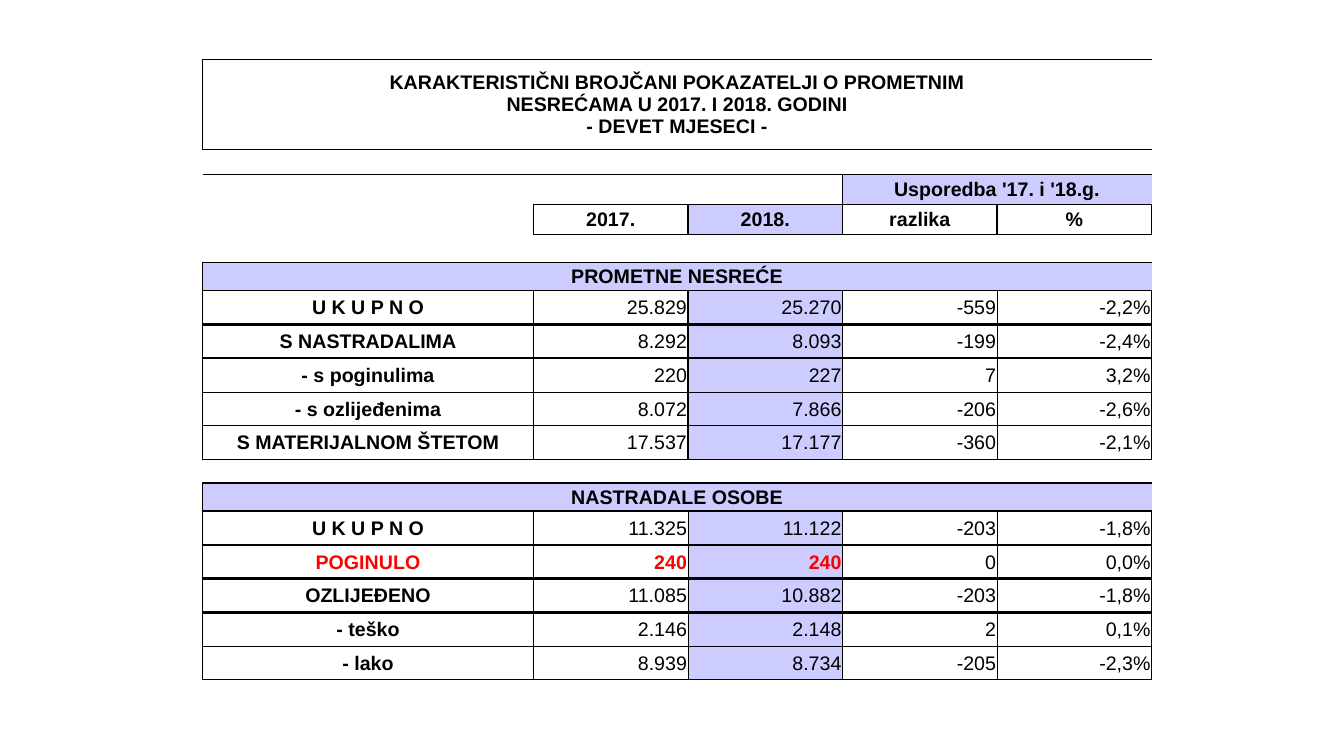
from dataclasses import dataclass

from lxml.etree import SubElement
from pptx import Presentation
from pptx.dml.color import RGBColor as Rgb
from pptx.enum.text import MSO_VERTICAL_ANCHOR as Anchor, PP_PARAGRAPH_ALIGNMENT as Align
from pptx.oxml import parse_xml
from pptx.oxml.ns import nsdecls, qn
from pptx.table import Table, _Cell as Cell
from pptx.util import Pt

COLORS = {"ink": "000000", "lilac": "CCCCFF", "alert": "FF0000"}
PLAIN_STYLE = "{2D5ABB26-0587-4C30-8999-92F81FD0307C}"
THIN, NORMAL, HEAVY = 0.5, 1, 2
COLUMN_WIDTHS = [104, 132.4] + [110.4] * 4
RECORD_HEIGHTS = [24.14] * 5
ROW_HEIGHTS = [64.25, 17.9, 21.4, 21.4, 20, 20.3, *RECORD_HEIGHTS,
               16.8, 20, *RECORD_HEIGHTS]


@dataclass
class Box:
    row: int
    first: int
    last: int
    text: str
    fill: str = ""
    color: str = "ink"
    bold: bool = True
    align: Align = Align.CENTER
    left: float = NORMAL
    top: float = NORMAL
    right: float = NORMAL
    bottom: float = NORMAL


@dataclass
class Record:
    label: str
    values: list[str]
    below: float
    color: str = "ink"


@dataclass
class Section:
    row: int
    heading: str
    dividers: list[float]  # vertical rules from left edge to right edge
    records: list[Record]


HEADERS = [
    Box(0, 0, 5, "KARAKTERISTIČNI BROJČANI POKAZATELJI O PROMETNIM\n"
                 "NESREĆAMA U 2017. I 2018. GODINI\n- DEVET MJESECI -"),
    Box(2, 4, 5, "Usporedba '17. i '18.g.", "lilac"),
    Box(3, 2, 2, "2017."),
    Box(3, 3, 3, "2018.", "lilac"),
    Box(3, 4, 4, "razlika"),
    Box(3, 5, 5, "%"),
]
SECTIONS = [
    Section(5, "PROMETNE NESREĆE", [NORMAL, NORMAL, NORMAL, NORMAL, THIN, NORMAL], [
        Record("U K U P N O", ["25.829", "25.270", "-559", "-2,2%"], HEAVY),
        Record("S NASTRADALIMA", ["8.292", "8.093", "-199", "-2,4%"], HEAVY),
        Record("- s poginulima", ["220", "227", "7", "3,2%"], THIN),
        Record("- s ozlijeđenima", ["8.072", "7.866", "-206", "-2,6%"], THIN),
        Record("S MATERIJALNOM ŠTETOM", ["17.537", "17.177", "-360", "-2,1%"], NORMAL),
    ]),
    Section(12, "NASTRADALE OSOBE", [NORMAL, THIN, THIN, THIN, THIN, NORMAL], [
        Record("U K U P N O", ["11.325", "11.122", "-203", "-1,8%"], HEAVY),
        Record("POGINULO", ["240", "240", "0", "0,0%"], HEAVY, "alert"),
        Record("OZLIJEĐENO", ["11.085", "10.882", "-203", "-1,8%"], HEAVY),
        Record("- teško", ["2.146", "2.148", "2", "0,1%"], THIN),
        Record("- lako", ["8.939", "8.734", "-205", "-2,3%"], NORMAL),
    ]),
]


def section_boxes(section: Section) -> list[Box]:
    """Lay out a heading and its records."""
    boxes = [Box(section.row, 0, 5, section.heading, "lilac")]
    rules, above = section.dividers, NORMAL
    for row, record in enumerate(section.records, section.row + 1):
        boxes.append(Box(row, 0, 1, record.label, color=record.color,
                         left=rules[0], right=rules[1], top=above, bottom=record.below))
        for index, value in enumerate(record.values):
            alert = record.color == "alert" and index < 2  # only the yearly counts
            boxes.append(Box(row, index + 2, index + 2, value,
                             "lilac" if index == 1 else "", "alert" if alert else "ink",
                             alert, Align.RIGHT, rules[index + 1], above,
                             rules[index + 2], record.below))
        above = record.below
    return boxes


def clear_cell(cell: Cell) -> None:
    """Remove the fill and keep an empty cell from stretching its row."""
    cell.fill.background()
    cell.margin_left = cell.margin_right = cell.margin_top = Pt(0.75)
    cell.margin_bottom = Pt(0)
    cell.vertical_anchor = Anchor.MIDDLE
    SubElement(cell.text_frame.paragraphs[0]._p, qn("a:endParaRPr"), sz="1000")


def write_box(table: Table, box: Box) -> None:
    cell = table.cell(box.row, box.first)
    if box.last > box.first:
        cell.merge(table.cell(box.row, box.last))
    if box.fill:
        cell.fill.solid()
        cell.fill.fore_color.rgb = Rgb.from_string(COLORS[box.fill])
    paragraph = cell.text_frame.paragraphs[0]
    paragraph.alignment = box.align
    for number, line in enumerate(box.text.split("\n")):
        if number:
            paragraph.add_line_break()
        run = paragraph.add_run()
        run.text = line
        run.font.name, run.font.size, run.font.bold = "Arial", Pt(14), box.bold
        run.font.color.rgb = Rgb.from_string(COLORS[box.color])


def collect_edges(boxes: list[Box]) -> dict[tuple[int, int], dict[str, float]]:
    """Give each rule to the cells on both of its sides."""
    edges = {(row, column): {} for row in range(len(ROW_HEIGHTS))
             for column in range(len(COLUMN_WIDTHS))}

    def add(row: int, column: int, side: str, width: float) -> None:
        if (row, column) in edges:
            edges[row, column][side] = width

    for box in boxes:
        add(box.row, box.first, "L", box.left)
        add(box.row, box.first - 1, "R", box.left)
        add(box.row, box.last, "R", box.right)
        add(box.row, box.last + 1, "L", box.right)
        for column in range(box.first, box.last + 1):
            add(box.row, column, "T", box.top)
            add(box.row - 1, column, "B", box.top)
            add(box.row, column, "B", box.bottom)
            add(box.row + 1, column, "T", box.bottom)
    return edges


def draw_edges(cell: Cell, widths: dict[str, float]) -> None:
    properties = cell._tc.get_or_add_tcPr()
    sides = [side for side in "LRTB" if side in widths]
    for position, side in enumerate(sides):
        properties.insert(position, parse_xml(
            f'<a:ln{side} {nsdecls("a")} w="{Pt(widths[side])}"><a:solidFill>'
            f'<a:srgbClr val="{COLORS["ink"]}"/></a:solidFill></a:ln{side}>'))


def main() -> None:
    deck = Presentation()
    deck.slide_width, deck.slide_height = Pt(960), Pt(540)
    slide = deck.slides.add_slide(deck.slide_layouts[6])

    # Table frame
    table = slide.shapes.add_table(
        len(ROW_HEIGHTS), len(COLUMN_WIDTHS), Pt(144.7), Pt(42.5),
        Pt(sum(COLUMN_WIDTHS)), Pt(sum(ROW_HEIGHTS))).table
    table.first_row = table.horz_banding = False
    table._tbl.tblPr.find(qn("a:tableStyleId")).text = PLAIN_STYLE
    for column, width in zip(table.columns, COLUMN_WIDTHS):
        column.width = Pt(width)
    for row, height in zip(table.rows, ROW_HEIGHTS):
        row.height = Pt(height)
    for cell in table.iter_cells():
        clear_cell(cell)

    # Headers, sections and rules
    boxes = HEADERS + [box for section in SECTIONS for box in section_boxes(section)]
    for box in boxes:
        write_box(table, box)
    for (row, column), widths in collect_edges(boxes).items():
        draw_edges(table.cell(row, column), widths)

    deck.save("out.pptx")


if __name__ == "__main__":
    main()
